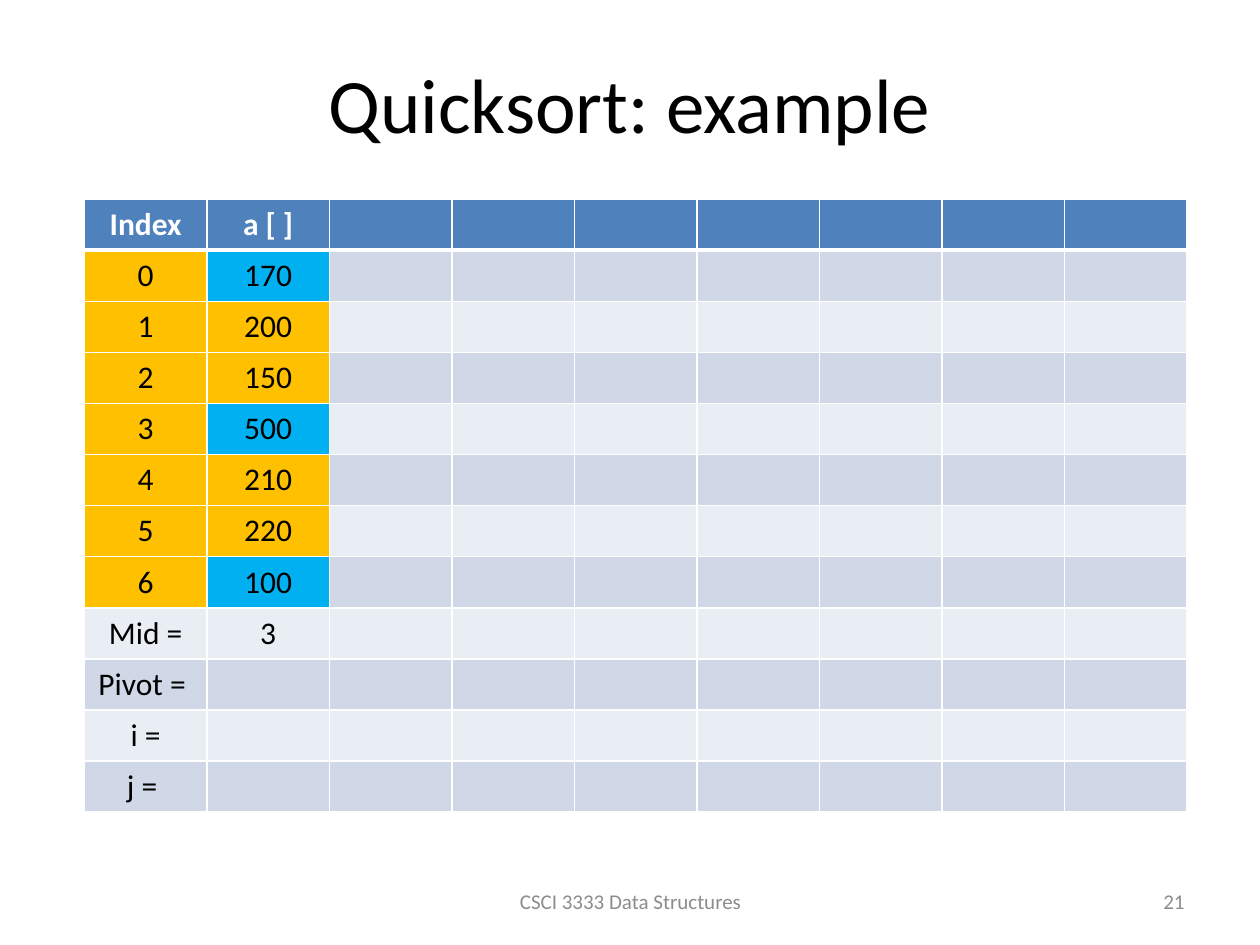
"""Build the quicksort example slide with its trace table."""
from lxml import etree
from pptx import Presentation
from pptx.dml.color import RGBColor
from pptx.enum.text import MSO_ANCHOR, PP_ALIGN
from pptx.oxml.ns import qn
from pptx.util import Inches, Pt

CENTER, RIGHT = PP_ALIGN.CENTER, PP_ALIGN.RIGHT
MIDDLE = MSO_ANCHOR.MIDDLE
BLACK = RGBColor(0x00, 0x00, 0x00)
WHITE = RGBColor(0xFF, 0xFF, 0xFF)
GRAY = RGBColor(0x8C, 0x8C, 0x8C)
HEADER_BLUE = RGBColor(0x4F, 0x81, 0xBD)
BANDS = (RGBColor(0xE9, 0xED, 0xF4), RGBColor(0xD0, 0xD8, 0xE8))
ORANGE = RGBColor(0xFF, 0xC0, 0x00)
CYAN = RGBColor(0x00, 0xB0, 0xF0)

TITLE = "Quicksort: example"
HEADER = ("Index", "a [ ]")
VALUES = (170, 200, 150, 500, 210, 220, 100)
COMPARED = {0, 3, 6}
VARIABLES = (("Mid =", "3"), ("Pivot = ", ""), ("i =", ""), ("j = ", ""))
COLUMN_COUNT = 9
TABLE_AREA = (0.67, 1.58, 8.75, 4.87)
FOOTERS = (
    ("CSCI 3333 Data Structures", (3.42, 6.95, 3.17, 0.4), CENTER),
    ("21", (7.17, 6.95, 2.33, 0.4), RIGHT),
)
TITLE_FONT = {"name": "Calibri", "size": Pt(44), "bold": False}
HEADER_FONT = {"name": "Calibri", "size": Pt(18), "bold": True}
BODY_FONT = {"name": "Calibri", "size": Pt(18), "bold": False}
FOOTER_FONT = {"name": "Calibri", "size": Pt(12), "bold": False}


def write(frame, text, font, color, align):
    para = frame.paragraphs[0]
    para.alignment = align
    span = para.add_run()
    span.text = text
    for name, value in font.items():
        setattr(span.font, name, value)
    span.font.color.rgb = color


def add_borders(cell, bottom_width):
    properties = cell._tc.get_or_add_tcPr()
    for side, width in (("L", 1), ("R", 1), ("T", 1), ("B", bottom_width)):
        line = etree.SubElement(properties, qn(f"a:ln{side}"), w=str(Pt(width)))
        fill = etree.SubElement(line, qn("a:solidFill"))
        etree.SubElement(fill, qn("a:srgbClr"), val=str(WHITE))


def cell_color(row, column):
    if row == 0:
        return HEADER_BLUE
    if row <= len(VALUES) and column < 2:
        return CYAN if column == 1 and row - 1 in COMPARED else ORANGE
    return BANDS[row % 2]


def add_trace_table(slide):
    items = [(str(index), str(value)) for index, value in enumerate(VALUES)]
    rows = [HEADER, *items, *VARIABLES]
    left, top, width, height = map(Inches, TABLE_AREA)
    table = slide.shapes.add_table(
        len(rows), COLUMN_COUNT, left, top, width, height
    ).table
    for row, texts in enumerate(rows):
        font, color = (HEADER_FONT, WHITE) if row == 0 else (BODY_FONT, BLACK)
        for column in range(COLUMN_COUNT):
            cell = table.cell(row, column)
            add_borders(cell, 3 if row == 0 else 1)
            cell.fill.solid()
            cell.fill.fore_color.rgb = cell_color(row, column)
            if column < len(texts) and texts[column]:
                write(cell.text_frame, texts[column], font, color, CENTER)


def main():
    deck = Presentation()
    deck.slide_width, deck.slide_height = Inches(10), Inches(7.5)
    slide = deck.slides.add_slide(deck.slide_layouts[5])
    title = slide.shapes.title
    title.left, title.top, title.width, title.height = map(
        Inches, (0.5, 0.3, 9, 1.03)
    )
    title.text_frame.vertical_anchor = MIDDLE
    write(title.text_frame, TITLE, TITLE_FONT, BLACK, CENTER)
    add_trace_table(slide)
    for text, area, align in FOOTERS:
        box = slide.shapes.add_textbox(*map(Inches, area))
        box.text_frame.word_wrap = True
        box.text_frame.vertical_anchor = MIDDLE
        write(box.text_frame, text, FOOTER_FONT, GRAY, align)
    deck.save("out.pptx")


if __name__ == "__main__":
    main()
